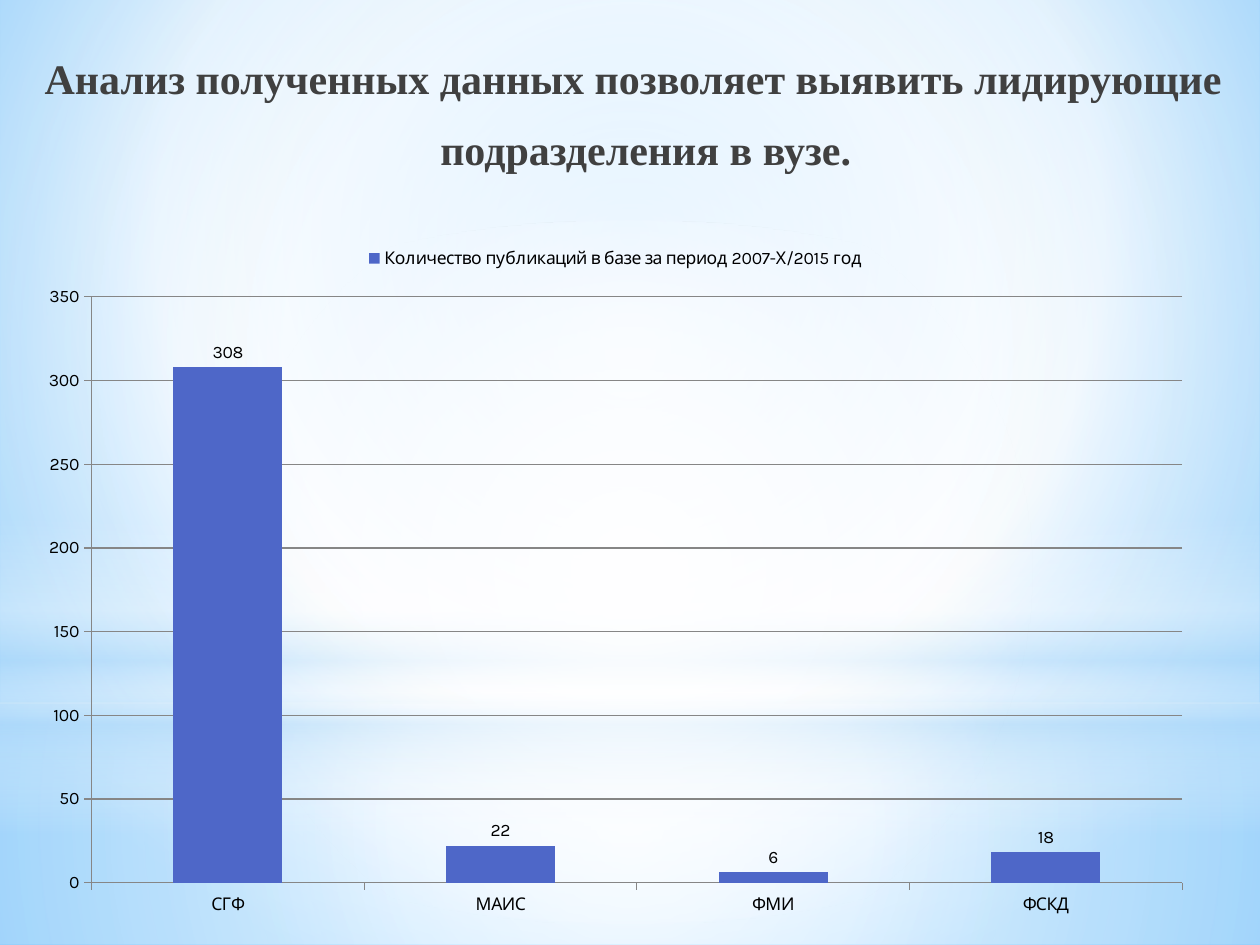
"""Build a slide with a column chart of publications by faculty."""
from pptx import Presentation
from pptx.chart.data import CategoryChartData
from pptx.dml.color import RGBColor
from pptx.enum.chart import XL_CHART_TYPE, XL_LABEL_POSITION, XL_LEGEND_POSITION, XL_TICK_MARK
from pptx.enum.shapes import MSO_SHAPE
from pptx.enum.text import MSO_ANCHOR, MSO_AUTO_SIZE, PP_ALIGN
from pptx.oxml import parse_xml
from pptx.oxml.ns import nsdecls, qn
from pptx.util import Inches, Pt

COLUMNS = XL_CHART_TYPE.COLUMN_CLUSTERED
OUTSIDE_END = XL_LABEL_POSITION.OUTSIDE_END
LEGEND_TOP = XL_LEGEND_POSITION.TOP
TICK_OUT, TICK_NONE = XL_TICK_MARK.OUTSIDE, XL_TICK_MARK.NONE
RECTANGLE, ELLIPSE = MSO_SHAPE.RECTANGLE, MSO_SHAPE.OVAL
TOP, CENTER, NO_FIT = MSO_ANCHOR.TOP, PP_ALIGN.CENTER, MSO_AUTO_SIZE.NONE

WIDTH, HEIGHT = Inches(10), Inches(7.5)
GRID_COLUMNS, GRID_ROWS = 20, 15
COLORS = {
    "white": "FFFFFF", "haze": "B4DCFA", "sky": "9ED5FF", "deep": "5BB9FF",
    "title": "404040", "text": "000000", "bar": "4E67C8", "grid": "868686",
}
MIDDLE = (50, 50, 50, 50)


def set_all(target, values):
    """Set every attribute of the target from a dict."""
    for name, value in values.items():
        setattr(target, name, value)


class SlideStyle:
    """Hold the style and the current slide."""

    def __init__(self, presentation):
        """Add a title-only slide."""
        self.slide = presentation.slides.add_slide(presentation.slide_layouts[5])

    def color(self, name):
        """Return a palette colour."""
        return RGBColor.from_string(COLORS[name])

    def place(self, *area):
        """Turn grid columns and rows into lengths."""
        cell = (WIDTH / GRID_COLUMNS, HEIGHT / GRID_ROWS) * 2
        return [round(count * size) for count, size in zip(area, cell)]

    def gradient(self, fill, owner, stops, focus):
        """Fill with a circular gradient, or a vertical one without focus."""
        fill.gradient()
        stop_xml = "".join(
            f'<a:gs pos="{position * 1000}"><a:srgbClr val="{COLORS[name]}">'
            f'<a:alpha val="{opacity * 1000}"/></a:srgbClr></a:gs>'
            for position, name, opacity in stops)
        if focus:
            edges = " ".join(f'{side}="{share * 1000}"' for side, share in zip("ltrb", focus))
            direction = f'<a:path path="circle"><a:fillToRect {edges}/></a:path>'
        else:
            direction = '<a:lin ang="5400000" scaled="0"/>'
        plain = owner.find(".//" + qn("a:gradFill"))
        plain.getparent().replace(plain, parse_xml(
            f'<a:gradFill {nsdecls("a")} rotWithShape="1"><a:gsLst>{stop_xml}</a:gsLst>'
            f'{direction}</a:gradFill>'))

    def background(self, stops, focus):
        """Fill the slide background."""
        self.gradient(self.slide.background.fill, self.slide.element, stops, focus)

    def glow(self, kind, area, stops, focus):
        """Add a soft gradient shape."""
        shape = self.slide.shapes.add_shape(kind, *self.place(*area))
        shape.shadow.inherit = False
        shape.line.fill.background()
        self.gradient(shape.fill, shape.element, stops, focus)

    def title(self, text, area):
        """Format the title and bring it above the glows."""
        title = self.slide.shapes.title
        set_all(title, dict(zip(("left", "top", "width", "height"), self.place(*area))))
        frame = title.text_frame
        frame.text = text
        set_all(frame, {"vertical_anchor": TOP, "word_wrap": True, "auto_size": NO_FIT})
        paragraph = frame.paragraphs[0]
        set_all(paragraph, {"alignment": CENTER, "line_spacing": 1.4,
                            "space_before": Pt(4.8), "space_after": Pt(3)})
        font = paragraph.runs[0].font
        set_all(font, {"name": "Times New Roman", "size": Pt(24), "bold": True})
        font.color.rgb = self.color("title")
        indents = title.element.find(".//" + qn("a:pPr"))
        for name, length in {"marL": 0.25, "indent": -0.2}.items():
            indents.set(name, str(Inches(length)))
        self.slide.shapes.element.append(title.element)

    def column_chart(self, area, series_name, values):
        """Add a column chart with value labels and a legend on top."""
        data = CategoryChartData()
        data.categories = list(values)
        data.add_series(series_name, list(values.values()))
        chart = self.slide.shapes.add_chart(COLUMNS, *self.place(*area), data).chart
        set_all(chart, {"has_title": False, "has_legend": True})
        set_all(chart.font, {"name": "Karla", "size": Pt(10)})
        chart.font.color.rgb = self.color("text")
        set_all(chart.legend, {"position": LEGEND_TOP, "include_in_layout": False})
        plot = chart.plots[0]
        set_all(plot, {"gap_width": 150, "vary_by_categories": False, "has_data_labels": True})
        set_all(plot.data_labels, {"show_value": True, "position": OUTSIDE_END})
        bars = plot.series[0].format.fill
        bars.solid()
        bars.fore_color.rgb = self.color("bar")
        set_all(chart.value_axis, {"minimum_scale": 0, "maximum_scale": 350, "major_unit": 50,
                                   "has_major_gridlines": True})
        for axis in (chart.category_axis, chart.value_axis):
            set_all(axis, {"major_tick_mark": TICK_OUT, "minor_tick_mark": TICK_NONE})
        for part in (chart.category_axis, chart.value_axis, chart.value_axis.major_gridlines):
            part.format.line.width = Pt(0.75)
            part.format.line.color.rgb = self.color("grid")


def main():
    """Build and save the slide."""
    presentation = Presentation()
    set_all(presentation, {"slide_width": WIDTH, "slide_height": HEIGHT})
    page = SlideStyle(presentation)
    page.background([(0, "sky", 100), (60, "white", 100), (100, "deep", 100)], (20, 10, 20, 60))
    glows = [
        (RECTANGLE, (0, 11.16, 20, 3.84),
         [(0, "white", 91), (37, "white", 76), (100, "haze", 79)], MIDDLE),
        (RECTANGLE, (0, 0, 20, 11.16),
         [(0, "white", 89), (48, "white", 62), (100, "haze", 79)], MIDDLE),
        (RECTANGLE, (0, 8.24, 20, 5),
         [(0, "white", 0), (29, "white", 30), (45, "haze", 40),
          (55, "white", 26), (65, "haze", 60), (100, "white", 0)], None),
        (ELLIPSE, (0, 3.5, 20, 11.16), [(0, "white", 100), (56, "white", 0)], MIDDLE),
    ]
    for glow in glows:
        page.glow(*glow)
    page.title("Анализ полученных данных позволяет выявить лидирующие подразделения в вузе.",
               (0, 0.42, 20, 2.52))
    page.column_chart((0.4, 3.72, 18.74, 11.02),
                      "Количество публикаций в базе за период 2007-Х/2015 год",
                      {"СГФ": 308, "МАИС": 22, "ФМИ": 6, "ФСКД": 18})
    presentation.save("out.pptx")


if __name__ == "__main__":
    main()
